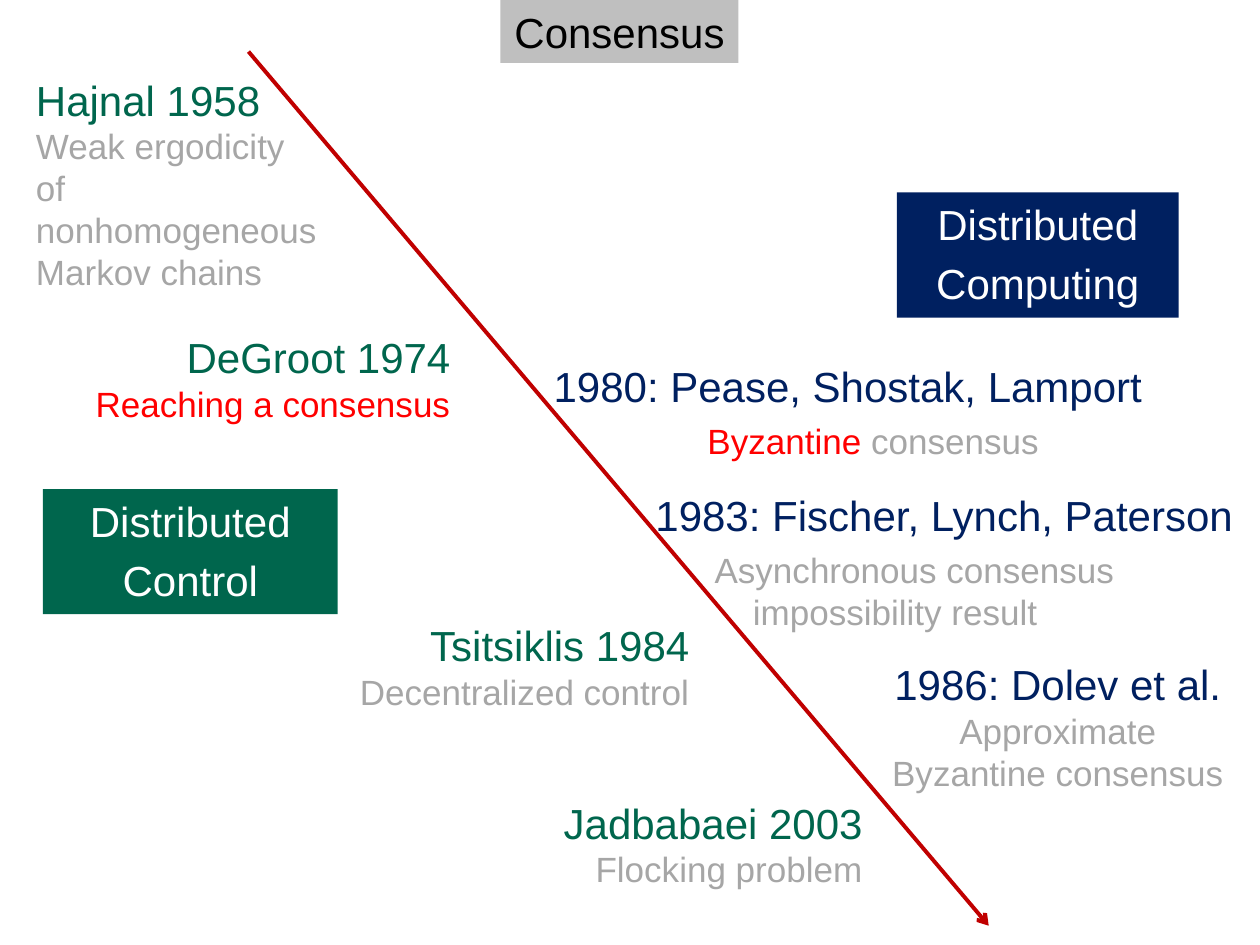
from lxml import etree
from pptx import Presentation
from pptx.dml.color import RGBColor
from pptx.enum.shapes import MSO_CONNECTOR, MSO_SHAPE
from pptx.enum.text import MSO_ANCHOR, MSO_AUTO_SIZE, PP_ALIGN
from pptx.oxml.ns import qn
from pptx.util import Pt

LEFT, MID, RIGHT = PP_ALIGN.LEFT, PP_ALIGN.CENTER, PP_ALIGN.RIGHT
RECT, LINE = MSO_SHAPE.RECTANGLE, MSO_CONNECTOR.STRAIGHT
TOP, FIXED = MSO_ANCHOR.TOP, MSO_AUTO_SIZE.NONE

THEME = {
    "font": "Arial", "head": 24, "note": 20, "lead": 1.2,
    "gap": 4.8, "side": 7.2, "edge": 3.6, "rule": 2.25,
    "green": "00664D", "navy": "002060", "gray": "A6A6A6", "red": "FF0000",
    "black": "000000", "white": "FFFFFF", "silver": "BFBFBF", "arrow": "C00000",
}

ARROW = (142, 29.5, 565, 529)
TITLE = ((286, 0, 136, 36), "silver", [("head", 0, 0, [("Consensus", "black")])])

# box, alignment, lines of (size, gap before, indent, runs)
NOTES = [
    ((307.5, 202.5, 354, 66), MID, [
        ("head", 0, 0, [("1980: Pease, Shostak, Lamport", "navy")]),
        ("note", 1, 29, [("Byzantine", "red"), (" consensus", "gray")])]),
    ((502, 373, 205, 120), MID, [
        ("head", 0, 0, [("1986: Dolev et al.", "navy")]),
        ("note", 0, 0, [("Approximate", "gray")]),
        ("note", 0, 0, [("Byzantine consensus", "gray")])]),
    ((133, 350.5, 268, 60), RIGHT, [
        ("head", 0, 0, [("Tsitsiklis 1984", "green")]),
        ("note", 0, 0, [("Decentralized control", "gray")])]),
    ((13.5, 39, 183, 133), LEFT, [
        ("head", 0, 0, [("Hajnal 1958", "green")]),
        ("note", 0, 0, [("Weak ergodicity", "gray")]),
        ("note", 0, 0, [("of nonhomogeneous Markov chains", "gray")])]),
    ((313, 452, 187, 60), RIGHT, [
        ("head", 0, 0, [("Jadbabaei 2003", "green")]),
        ("note", 0, 0, [("Flocking problem", "gray")])]),
    ((307.5, 276, 408, 90), MID, [
        ("head", 0, 56, [("1983: Fischer, Lynch, Paterson", "navy")]),
        ("note", 1, 22, [("Asynchronous consensus", "gray")]),
        ("note", 0, 0, [("impossibility result", "gray")])]),
    ((29.5, 186, 235, 60), RIGHT, [
        ("head", 0, 0, [("DeGroot 1974", "green")]),
        ("note", 0, 0, [("Reaching a consensus", "red")])]),
]

FIELDS = [
    ((24.5, 279.5, 168.5, 71.5), "green", ["Distributed", "Control"]),
    ((512.5, 110, 161, 71.5), "navy", ["Distributed", "Computing"]),
]


def tint(name):
    return RGBColor.from_string(THEME[name])


def write(shape, align, lines):
    frame = shape.text_frame
    frame.word_wrap = True
    frame.auto_size = FIXED
    frame.vertical_anchor = TOP
    frame.margin_left = frame.margin_right = Pt(0 if align == MID else THEME["side"])
    frame.margin_top = frame.margin_bottom = Pt(THEME["edge"])
    for i, (size, gap, indent, runs) in enumerate(lines):
        para = frame.paragraphs[0] if i == 0 else frame.add_paragraph()
        para.alignment = align
        para.line_spacing = Pt(THEME[size] * THEME["lead"])
        para.space_before = Pt(gap * THEME["gap"])
        if indent:
            para._p.get_or_add_pPr().set("marL", str(Pt(indent)))
        for text, color in runs:
            run = para.add_run()
            run.text = text
            run.font.name = THEME["font"]
            run.font.size = Pt(THEME[size])
            run.font.color.rgb = tint(color)


def paint(shape, color):
    shape.fill.solid()
    shape.fill.fore_color.rgb = tint(color)
    shape.line.fill.background()


def draw_arrow(slide):
    arrow = slide.shapes.add_connector(LINE, *map(Pt, ARROW))
    arrow.line.color.rgb = tint("arrow")
    arrow.line.width = Pt(THEME["rule"])
    props = arrow._element.spPr
    etree.SubElement(props.find(qn("a:ln")), qn("a:tailEnd"), type="arrow")
    etree.SubElement(props, qn("a:effectLst"))


def main():
    deck = Presentation()
    deck.slide_width, deck.slide_height = Pt(720), Pt(540)
    slide = deck.slides.add_slide(deck.slide_layouts[5])
    draw_arrow(slide)

    box, color, lines = TITLE
    title = slide.shapes.title
    title.left, title.top, title.width, title.height = map(Pt, box)
    paint(title, color)
    write(title, MID, lines)

    for box, align, lines in NOTES:
        write(slide.shapes.add_textbox(*map(Pt, box)), align, lines)

    for box, color, words in FIELDS:
        field = slide.shapes.add_shape(RECT, *map(Pt, box))
        field.shadow.inherit = False
        paint(field, color)
        write(field, MID, [("head", min(i, 1), 0, [(word, "white")])
                           for i, word in enumerate(words)])

    deck.save("out.pptx")


if __name__ == "__main__":
    main()
